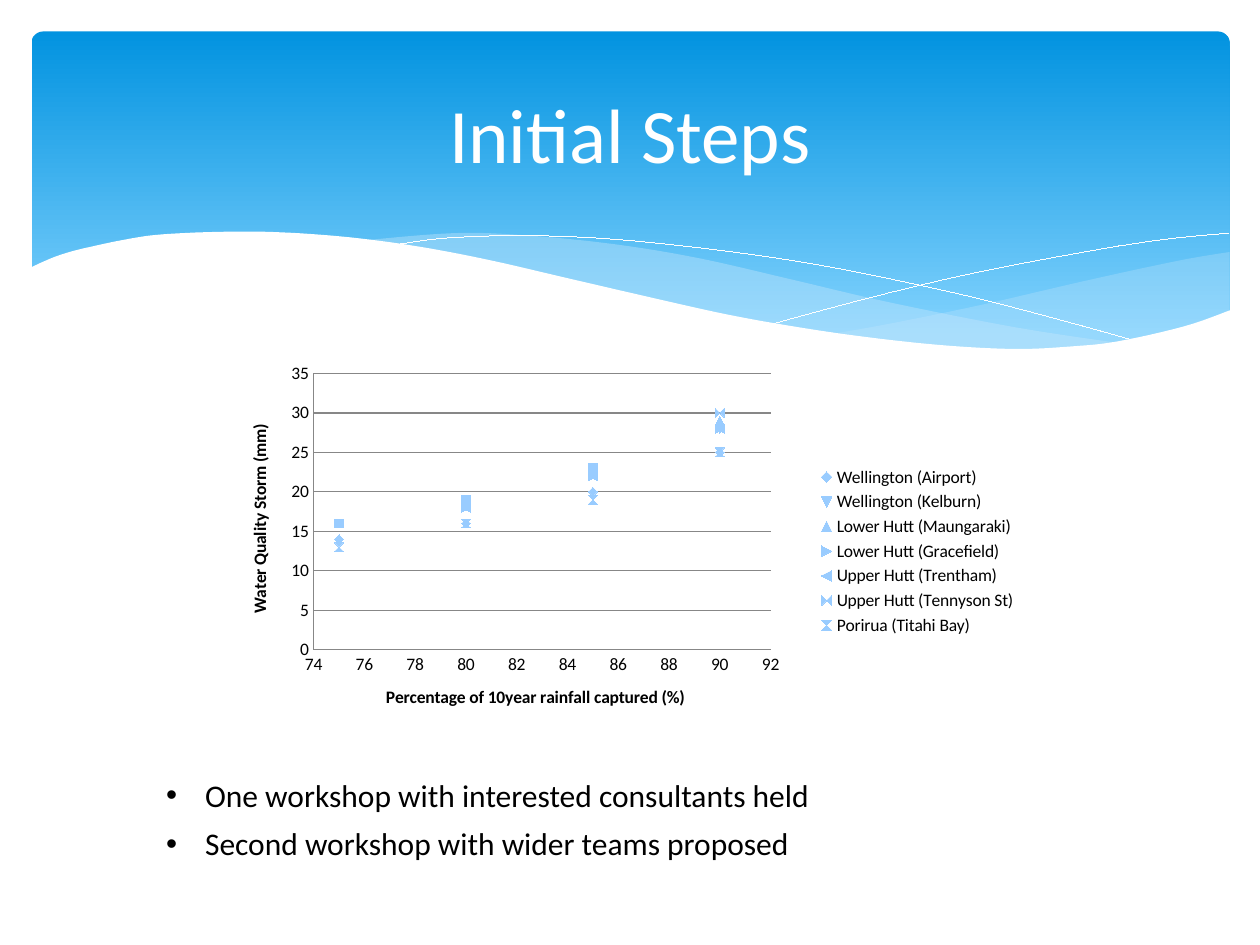
import pptx
import pptx.chart.data
import pptx.dml.color
import pptx.enum.chart
import pptx.enum.shapes
import pptx.enum.text
import pptx.oxml
import pptx.oxml.ns
import pptx.util
from lxml import etree

RGB = pptx.dml.color.RGBColor
WHITE, BLACK = RGB(255, 255, 255), RGB(0, 0, 0)
DEEP, SKY = RGB(0x02, 0x93, 0xE0), RGB(0x83, 0xD3, 0xFE)
PALE, MARK = RGB(0xC6, 0xE7, 0xFC), RGB(0x99, 0xCC, 0xFF)
GREY = RGB(0x87, 0x87, 0x87)
FONT = "Calibri"
COLS, ROWS = 10, 7.5  # slide grid, one inch per unit

# Curves of the header: knots that a smooth line runs through
RIGHT_TOP = [(9.76, 2), (9.35, 2.07), (8.61, 2.23), (7.79, 2.42), (7.06, 2.57), (6.61, 2.65)]
RIGHT_LOW = [(6.61, 2.65), (7.05, 2.71), (7.57, 2.76), (8.14, 2.78), (8.72, 2.74),
             (9.28, 2.63), (9.76, 2.47)]
LONG_TOP = [(8.93, 2.73), (8.07, 2.6), (7.06, 2.4), (6.29, 2.22), (5.55, 2.05),
            (4.89, 1.94), (4.2, 1.87), (3.61, 1.85), (2.86, 1.91)]
LONG_LOW = [(2.86, 1.91), (3.62, 2.03), (4.49, 2.22), (5.3, 2.4), (6.18, 2.58),
            (6.95, 2.7), (7.61, 2.77), (8.18, 2.78), (8.93, 2.73)]
FALL = [(3.09, 1.95), (3.53, 1.89), (4.16, 1.87), (4.89, 1.9), (5.82, 2),
        (6.65, 2.13), (7.6, 2.33), (8.31, 2.51), (9.07, 2.72)]
RISE = [(6.13, 2.57), (6.95, 2.35), (7.76, 2.16), (8.66, 1.99), (9.24, 1.9), (9.75, 1.85)]
EDGE = [(9.77, 2.46), (9.4, 2.59), (8.87, 2.71), (8.5, 2.75), (8.09, 2.77),
        (7.61, 2.75), (7.08, 2.7), (6.48, 2.62), (5.79, 2.5), (5.03, 2.33),
        (4.47, 2.2), (3.91, 2.07), (3.4, 1.97), (2.92, 1.9), (2.5, 1.86),
        (2.11, 1.84), (1.77, 1.84), (1.46, 1.85), (1.19, 1.87), (0.95, 1.91),
        (0.76, 1.95), (0.59, 1.99), (0.46, 2.03), (0.36, 2.07), (0.23, 2.13)]
FLOOR = [(0.23, 3.29), (9.77, 3.29)]

# Chart values
SHARES = (75, 80, 85, 90)
STORMS = {
    "Wellington (Airport)": (14, 16, 20, 25),
    "Wellington (Kelburn)": (16, 19, 23, 28),
    "Lower Hutt (Maungaraki)": (16, 19, 23, 29),
    "Lower Hutt (Gracefield)": (16, 18, 22, 28),
    "Upper Hutt (Trentham)": (16, 18, 22, 28),
    "Upper Hutt (Tennyson St)": (16, 19, 23, 30),
    "Porirua (Titahi Bay)": (13, 16, 19, 25),
}


def units(box):
    return [pptx.util.Inches(n) for n in box]


def style(font, size, color, bold=False):
    font.name, font.size, font.bold = FONT, pptx.util.Pt(size), bold
    font.color.rgb = color


def smooth(knots, steps=6):
    """Points of a Catmull-Rom curve through the knots."""
    ends = [knots[0], *knots, knots[-1]]
    points = [knots[0]]
    for a, b, c, d in zip(ends, ends[1:], ends[2:], ends[3:]):
        for step in range(1, steps + 1):
            t = step / steps
            points.append(tuple(
                (2 * q + (r - p) * t + (2 * p - 5 * q + 4 * r - s) * t ** 2
                 + (3 * q - p - 3 * r + s) * t ** 3) / 2
                for p, q, r, s in zip(a, b, c, d)))
    return points


def draw(slide, box, points, fill=None, alpha=100):
    """A filled outline, or a hairline in white when there is no fill."""
    spots = [units((box[0] + x, box[1] + y)) for x, y in points]
    pen = slide.shapes.build_freeform(*spots[0])
    pen.add_line_segments(spots[1:], close=fill is not None)
    shape = pen.convert_to_shape()
    shape.shadow.inherit = False
    if fill is None:
        shape.fill.background()
        shape.line.color.rgb = WHITE
        shape.line.width = pptx.util.Pt(0.01)
        return
    shape.fill.solid()
    shape.fill.fore_color.rgb = fill
    shape.line.fill.background()
    if alpha < 100:
        tone = shape.fill._xPr.find(".//" + pptx.oxml.ns.qn("a:srgbClr"))
        etree.SubElement(tone, pptx.oxml.ns.qn("a:alpha"), val=str(alpha * 1000))


def header(slide, box):
    left, top, width, _ = box
    # Gradient panel
    panel = slide.shapes.add_shape(
        pptx.enum.shapes.MSO_SHAPE.ROUNDED_RECTANGLE,
        *units((left + 0.25, top + 0.25, width - 0.49, 2.7)))
    panel.adjustments[0] = 0.034
    panel.shadow.inherit = False
    panel.line.fill.background()
    panel.fill.gradient()
    panel.fill.gradient_angle = 270
    for stop, place, color in zip(panel.fill.gradient_stops, (0, 0.9), (DEEP, SKY)):
        stop.position, stop.color.rgb = place, color
    # Waves
    draw(slide, box, smooth(RIGHT_TOP) + smooth(RIGHT_LOW), PALE, 29)
    draw(slide, box, smooth(LONG_TOP) + smooth(LONG_LOW), PALE, 40)
    draw(slide, box, smooth(FALL))
    draw(slide, box, smooth(RISE))
    draw(slide, box, smooth(EDGE) + FLOOR, WHITE)
    # Title
    frame = slide.shapes.add_textbox(
        *units((left + 0.5, top + 0.37, width - 1, 1.37))).text_frame
    frame.word_wrap = True
    frame.vertical_anchor = pptx.enum.text.MSO_ANCHOR.MIDDLE
    frame.text = "Initial Steps"
    frame.paragraphs[0].alignment = pptx.enum.text.PP_ALIGN.CENTER
    style(frame.paragraphs[0].runs[0].font, 44, WHITE)


def scatter(slide, box):
    data = pptx.chart.data.XyChartData()
    for name, depths in STORMS.items():
        row = data.add_series(name)
        for share, depth in zip(SHARES, depths):
            row.add_data_point(share, depth)
    chart = slide.shapes.add_chart(
        pptx.enum.chart.XL_CHART_TYPE.XY_SCATTER, *units(box), data).chart
    style(chart.font, 10, BLACK)
    chart.has_title = False
    chart.has_legend = True
    chart.legend.position = pptx.enum.chart.XL_LEGEND_POSITION.RIGHT
    chart.legend.include_in_layout = False
    chart.plots[0].vary_by_categories = False
    for row in chart.plots[0].series:
        row.smooth = False
        row.format.line.fill.background()
        row.marker.format.fill.solid()
        row.marker.format.fill.fore_color.rgb = MARK
        row.marker.format.line.fill.background()
    # Axes
    for axis, title, low, high, step in (
            (chart.category_axis, "Percentage of 10year rainfall captured (%)", 74, 92, 2),
            (chart.value_axis, "Water Quality Storm (mm)", 0, 35, 5)):
        axis.minimum_scale, axis.maximum_scale, axis.major_unit = low, high, step
        axis.major_tick_mark = pptx.enum.chart.XL_TICK_MARK.NONE
        axis.minor_tick_mark = pptx.enum.chart.XL_TICK_MARK.NONE
        axis.has_major_gridlines = False
        axis.format.line.color.rgb = GREY
        frame = axis.axis_title.text_frame
        frame.text = title
        style(frame.paragraphs[0].runs[0].font, 10, BLACK, True)
    chart.value_axis.has_major_gridlines = True
    chart.value_axis.major_gridlines.format.line.color.rgb = GREY
    # Plot area as shares of the chart
    area = chart._chartSpace.chart.plotArea
    for old in area.findall(pptx.oxml.ns.qn("c:layout")):
        area.remove(old)
    parts = [("layoutTarget", "inner"), ("xMode", "edge"), ("yMode", "edge"),
             ("x", 0.104), ("y", 0.028), ("w", 0.572), ("h", 0.734)]
    tags = "".join(f'<c:{tag} val="{val}"/>' for tag, val in parts)
    area.insert(0, pptx.oxml.parse_xml(
        f'<c:layout {pptx.oxml.ns.nsdecls("c")}><c:manualLayout>{tags}'
        '</c:manualLayout></c:layout>'))


def notes(slide, box, lines):
    frame = slide.shapes.add_textbox(*units(box)).text_frame
    frame.word_wrap = False
    frame.text = "\n".join(lines)
    for line in frame.paragraphs:
        line.space_after = pptx.util.Pt(6)
        style(line.runs[0].font, 18, BLACK)
        props = line._p.get_or_add_pPr()
        indent = pptx.util.Inches(0.31)
        props.set("marL", str(indent))
        props.set("indent", str(-indent))
        etree.SubElement(props, pptx.oxml.ns.qn("a:buFont"), typeface="Arial")
        etree.SubElement(props, pptx.oxml.ns.qn("a:buChar"), char="•")


def main():
    deck = pptx.Presentation()
    deck.slide_width, deck.slide_height = units((COLS, ROWS))
    slide = deck.slides.add_slide(deck.slide_layouts[6])
    header(slide, (0, 0, COLS, 3.3))
    scatter(slide, (1.83, 2.88, 6.34, 2.99))
    notes(slide, (1.22, 6.11, 5.57, 0.79),
          ("One workshop with interested consultants held",
           "Second workshop with wider teams proposed"))
    deck.save("out.pptx")


if __name__ == "__main__":
    main()
